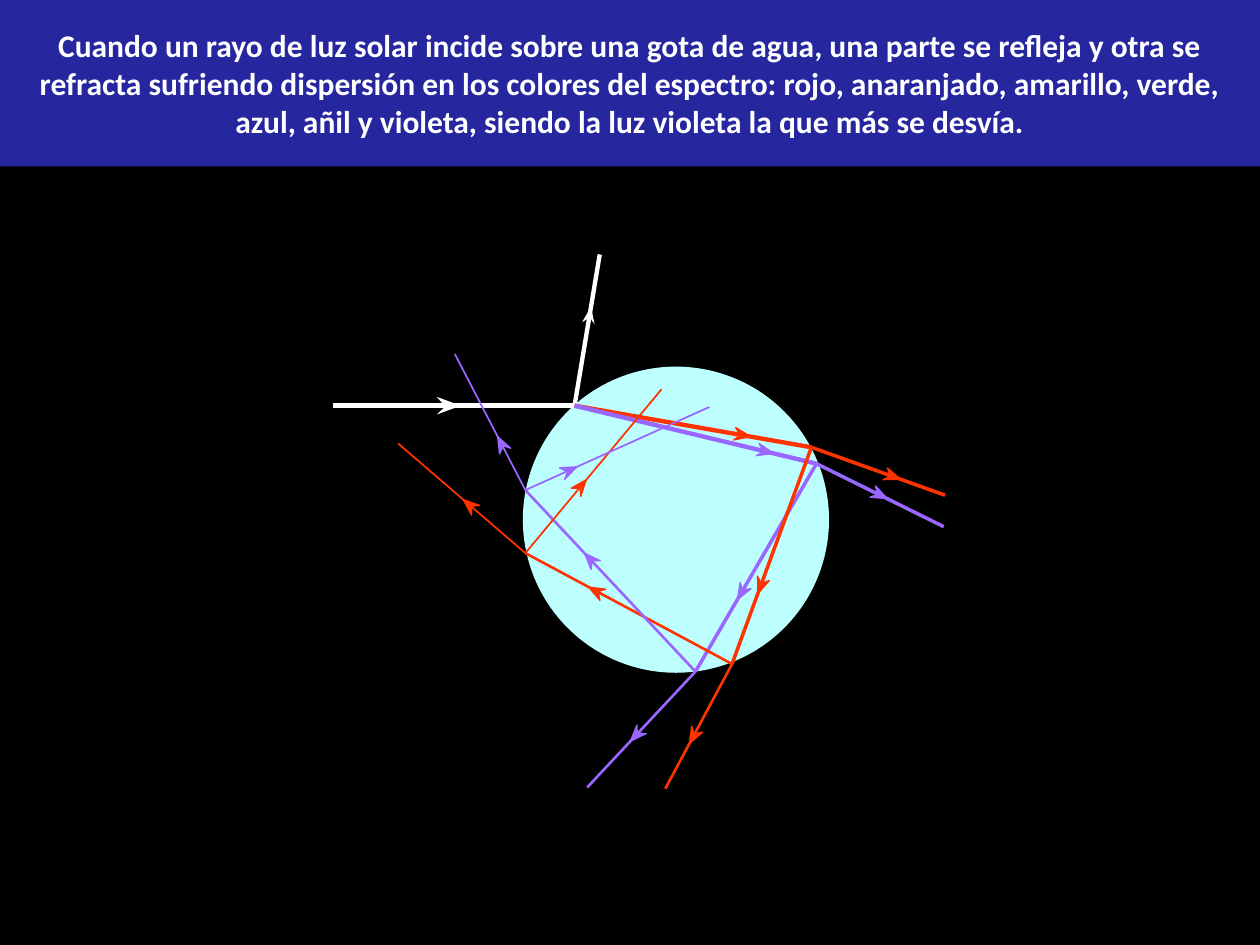
from math import atan2, degrees
from pptx import Presentation
from pptx.dml.color import RGBColor
from pptx.enum.shapes import MSO_CONNECTOR as Connector, MSO_SHAPE as Shape
from pptx.enum.text import MSO_ANCHOR as Anchor, PP_ALIGN as Align
from pptx.oxml.ns import qn
from pptx.util import Inches, Pt
from lxml.etree import SubElement

WIDTH, HEIGHT = 10, 7.5
TITLE_HEIGHT = 1.32
TITLE = ("Cuando un rayo de luz solar incide sobre una gota de agua, una parte se refleja "
         "y otra se refracta sufriendo dispersión en los colores del espectro: rojo, "
         "anaranjado, amarillo, verde, azul, añil y violeta, siendo la luz violeta la que "
         "más se desvía.")

WHITE, RED, VIOLET = "FFFFFF", "FF3300", "9966FF"
BLACK, NAVY, WATER = "000000", "26269E", "BDFFFF"
DROP_CENTER, DROP_SIZE = (5.365, 4.125), 2.43

ENTRY = (4.56, 3.22)
RED_RIGHT, RED_BOTTOM, RED_LEFT = (6.44, 3.55), (5.81, 5.27), (4.17, 4.39)
VIOLET_RIGHT, VIOLET_BOTTOM, VIOLET_LEFT = (6.48, 3.68), (5.52, 5.33), (4.17, 3.89)

BIG_HEAD, SMALL_HEAD = (0.19, 0.14), (0.13, 0.10)
HEAD_OUTLINE = [(0, 0), (1, 0.5), (0, 1), (0.35, 0.55)]

# color, width, start, end, share of the ray where the head sits
RAY_GROUPS = [
    [(WHITE, 3, (2.64, 3.22), ENTRY, 0.48)],
    [(WHITE, 2.5, ENTRY, (4.76, 2.02), 0.6)],
    [(RED, 2.5, ENTRY, RED_RIGHT, 0.71),
     (VIOLET, 2.5, ENTRY, VIOLET_RIGHT, 0.79)],
    [(VIOLET, 2, VIOLET_RIGHT, VIOLET_BOTTOM, 0.62),
     (RED, 2, RED_RIGHT, RED_BOTTOM, 0.64)],
    [(VIOLET, 2, VIOLET_RIGHT, (7.49, 4.18), 0.5),
     (RED, 2, RED_RIGHT, (7.5, 3.93), 0.61)],
    [(RED, 1.5, RED_BOTTOM, RED_LEFT, 0.66),
     (VIOLET, 1.5, VIOLET_BOTTOM, VIOLET_LEFT, 0.62)],
    [(VIOLET, 1.5, VIOLET_BOTTOM, (4.66, 6.25), 0.55),
     (RED, 1.5, RED_BOTTOM, (5.28, 6.26), 0.58)],
    [(RED, 1, RED_LEFT, (3.16, 3.52), 0.44),
     (VIOLET, 1, VIOLET_LEFT, (3.61, 2.81), 0.34)],
    [(RED, 1, RED_LEFT, (5.25, 3.09), 0.41),
     (VIOLET, 1, VIOLET_LEFT, (5.63, 3.23), 0.24)],
]


def color(value):
    return RGBColor.from_string(value)


def paint(shape, fill):
    shape.shadow.inherit = False
    shape.fill.solid()
    shape.fill.fore_color.rgb = color(fill)
    shape.line.fill.background()


def add_filled(shapes, kind, left, top, width, height, fill):
    shape = shapes.add_shape(kind, *map(Inches, (left, top, width, height)))
    paint(shape, fill)
    return shape


def add_ray(shapes, ink, width, start, end):
    ray = shapes.add_connector(Connector.STRAIGHT, *map(Inches, start + end))
    ray.line.color.rgb = color(ink)
    ray.line.width = Pt(width)
    SubElement(ray._element.spPr, qn("a:effectLst"))


def add_head(shapes, ink, width, start, end, share):
    run, rise = end[0] - start[0], end[1] - start[1]
    length, breadth = BIG_HEAD if width == 3 else SMALL_HEAD
    left = start[0] + share * run - length / 2
    top = start[1] + share * rise - breadth / 2
    points = [(Inches(left + x * length), Inches(top + y * breadth)) for x, y in HEAD_OUTLINE]
    builder = shapes.build_freeform(*points[0])
    builder.add_line_segments(points[1:], close=True)
    head = builder.convert_to_shape()
    paint(head, ink)
    head.rotation = degrees(atan2(rise, run)) % 360
    if ink != WHITE:
        head.line.color.rgb = color(ink)
        head.line.width = Pt(0.75)


def add_title(shapes):
    box = add_filled(shapes, Shape.RECTANGLE, 0, 0, WIDTH, TITLE_HEIGHT, NAVY)
    frame = box.text_frame
    frame.word_wrap = True
    frame.vertical_anchor = Anchor.MIDDLE
    para = frame.paragraphs[0]
    para.alignment = Align.CENTER
    span = para.add_run()
    span.text = TITLE
    span.font.name, span.font.size, span.font.bold = "Calibri", Pt(18), True
    span.font.color.rgb = color(WHITE)


def main():
    deck = Presentation()
    deck.slide_width, deck.slide_height = Inches(WIDTH), Inches(HEIGHT)
    page = deck.slides.add_slide(deck.slide_layouts[6])
    page.background.fill.solid()
    page.background.fill.fore_color.rgb = color(BLACK)

    left, top = (middle - DROP_SIZE / 2 for middle in DROP_CENTER)
    add_filled(page.shapes, Shape.OVAL, left, top, DROP_SIZE, DROP_SIZE, WATER)
    add_title(page.shapes)
    for rays in RAY_GROUPS:
        group = page.shapes.add_group_shape()
        for ink, width, start, end, share in rays:
            add_ray(group.shapes, ink, width, start, end)
        for ray in rays:
            add_head(group.shapes, *ray)
    deck.save("out.pptx")


if __name__ == "__main__":
    main()
